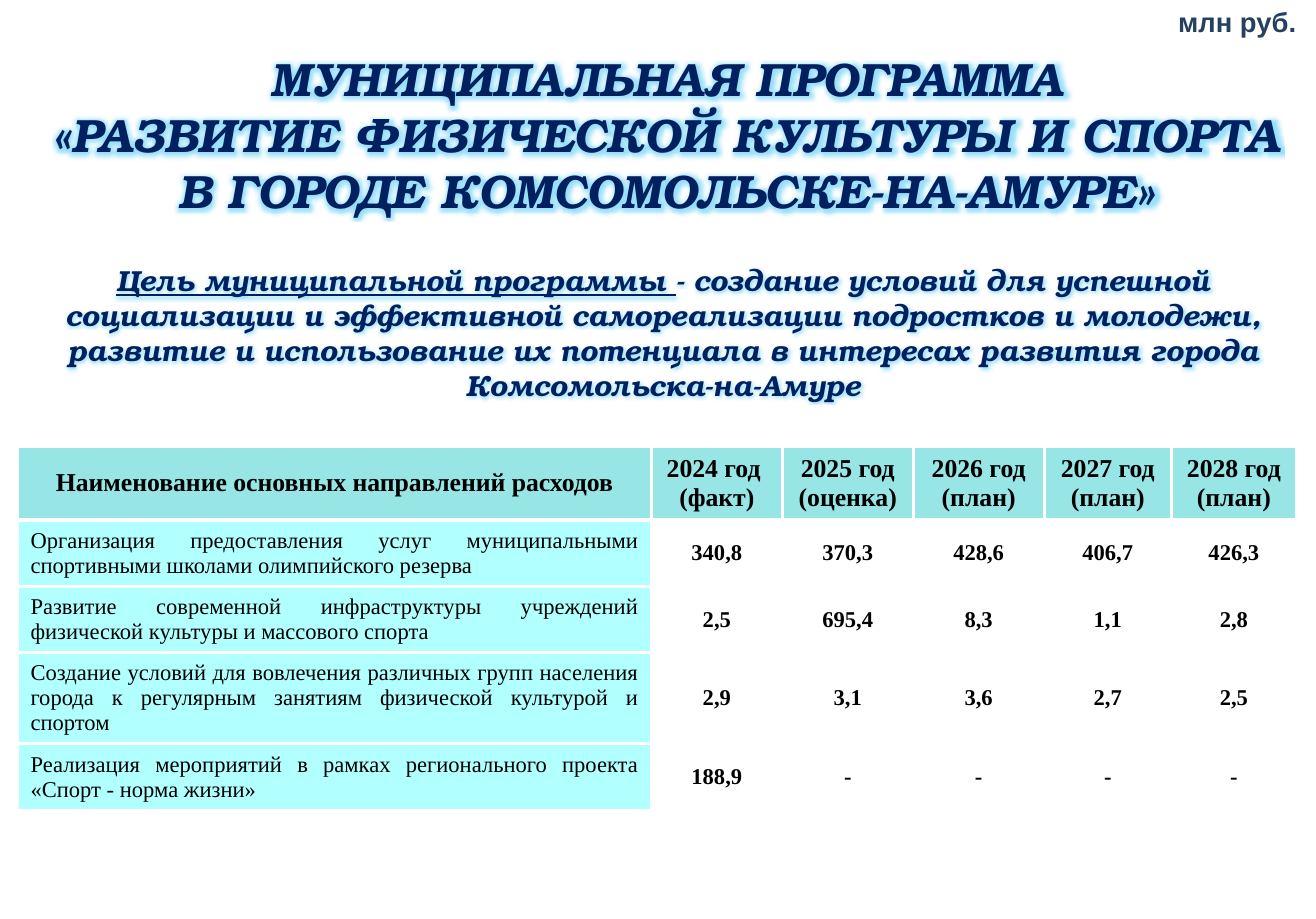
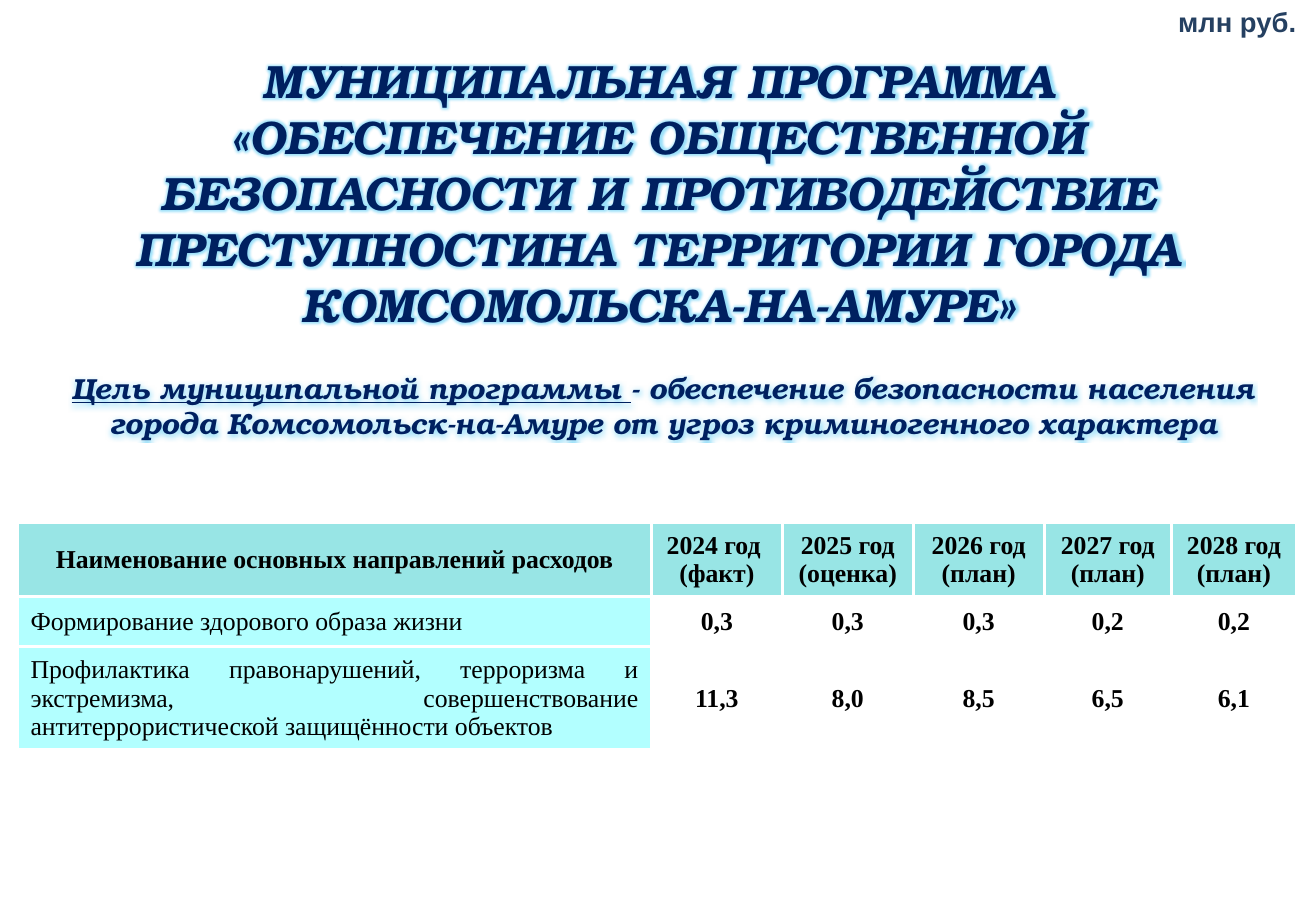
from lxml import etree
from pptx import Presentation
from pptx.dml.color import RGBColor
from pptx.enum.text import MSO_ANCHOR, MSO_AUTO_SIZE, PP_ALIGN
from pptx.oxml import parse_xml
from pptx.oxml.ns import nsdecls, qn
from pptx.util import Cm, Pt

CENTER, JUSTIFY, LEFT = PP_ALIGN.CENTER, PP_ALIGN.JUSTIFY, PP_ALIGN.LEFT
MIDDLE, BOTTOM = MSO_ANCHOR.MIDDLE, MSO_ANCHOR.BOTTOM
NO_FIT = MSO_AUTO_SIZE.NONE
TITLE_ONLY = 5

COLORS = {
    "navy": "002060",
    "note": "254061",
    "black": "000000",
    "white": "FFFFFF",
    "glow": "00B0F0",
    "header": "33CCCC",
    "label": "66FFFF",
}
DISPLAY = {"font": "TeX Gyre Bonum", "color": "navy", "bold": True, "italic": True, "glow": True}
COLUMN_WIDTHS = [13.89, 2.87, 2.87, 2.87, 2.79, 2.74]
HEADER = [
    "Наименование основных направлений расходов",
    "2024 год \n(факт)",
    "2025 год (оценка)",
    "2026 год (план)",
    "2027 год (план)",
    "2028 год (план)",
]
HEADER_HEIGHT = 1.6

PAGES = [
    {
        "title": "МУНИЦИПАЛЬНАЯ ПРОГРАММА\n«РАЗВИТИЕ ФИЗИЧЕСКОЙ КУЛЬТУРЫ И СПОРТА\n"
                 "В ГОРОДЕ КОМСОМОЛЬСКЕ-НА-АМУРЕ»",
        "title_at": (0.81, 0.79, 27.61, 4.29),
        "goal": "- создание условий для успешной социализации и эффективной самореализации "
                "подростков и молодежи, развитие и использование их потенциала в интересах "
                "развития города Комсомольска-на-Амуре",
        "goal_at": (0.61, 5.64, 27.86, 3.33),
        "table_top": 9.78,
        "size": 14,
        "heights": [1.45, 1.45, 1.97, 1.45],
        "rows": [
            ["Организация предоставления услуг муниципальными спортивными школами "
             "олимпийского резерва", "340,8", "370,3", "428,6", "406,7", "426,3"],
            ["Развитие современной инфраструктуры учреждений физической культуры "
             "и массового спорта", "2,5", "695,4", "8,3", "1,1", "2,8"],
            ["Создание условий для вовлечения различных групп населения города "
             "к регулярным занятиям физической культурой и спортом",
             "2,9", "3,1", "3,6", "2,7", "2,5"],
            ["Реализация мероприятий в рамках регионального проекта "
             "«Спорт - норма жизни»", "188,9", "-", "-", "-", "-"],
        ],
    },
    {
        "title": "МУНИЦИПАЛЬНАЯ ПРОГРАММА\n«ОБЕСПЕЧЕНИЕ ОБЩЕСТВЕННОЙ БЕЗОПАСНОСТИ "
                 "И ПРОТИВОДЕЙСТВИЕ ПРЕСТУПНОСТИНА ТЕРРИТОРИИ ГОРОДА КОМСОМОЛЬСКА-НА-АМУРЕ»",
        "title_at": (0.23, 0.69, 28.42, 6.88),
        "goal": "- обеспечение безопасности населения города Комсомольск-на-Амуре "
                "от угроз криминогенного характера",
        "goal_at": (0.61, 8, 27.86, 1.8),
        "table_top": 11.46,
        "size": 16,
        "heights": [1.1, 2.26],
        "rows": [
            ["Формирование здорового образа жизни", "0,3", "0,3", "0,3", "0,2", "0,2"],
            ["Профилактика правонарушений, терроризма и экстремизма, совершенствование "
             "антитеррористической защищённости объектов",
             "11,3", "8,0", "8,5", "6,5", "6,1"],
        ],
    },
]


def write(para, text, size, font, color, bold=False, italic=False,
          underline=False, glow=False, align=CENTER):
    para.alignment = align
    span = para.add_run()
    span.text = text
    span.font.size = Pt(size)
    span.font.bold = bold
    span.font.italic = italic
    span.font.underline = underline
    span.font.color.rgb = RGBColor.from_string(COLORS[color])
    if glow:
        span.font._element.append(parse_xml(
            f'<a:effectLst {nsdecls("a")}><a:glow rad="63500">'
            f'<a:srgbClr val="{COLORS["glow"]}"><a:alpha val="40000"/></a:srgbClr>'
            '</a:glow></a:effectLst>'))
    span.font.name = font


def write_lines(frame, text, **style):
    for index, line in enumerate(text.split("\n")):
        para = frame.add_paragraph() if index else frame.paragraphs[0]
        write(para, line, **style)


deck = Presentation()
deck.slide_width, deck.slide_height = Cm(28.85), Cm(20.14)

for content in PAGES:
    page = deck.slides.add_slide(deck.slide_layouts[TITLE_ONLY])

    title = page.shapes.title
    title.left, title.top, title.width, title.height = map(Cm, content["title_at"])
    frame = title.text_frame
    frame.auto_size = NO_FIT
    frame.word_wrap = True
    frame.vertical_anchor = BOTTOM
    frame.margin_left = frame.margin_right = frame.margin_top = frame.margin_bottom = Cm(0.3)
    write_lines(frame, content["title"], size=29, **DISPLAY)

    heights = [HEADER_HEIGHT] + content["heights"]
    table = page.shapes.add_table(
        len(heights), len(COLUMN_WIDTHS), Cm(0.39), Cm(content["table_top"]),
        Cm(sum(COLUMN_WIDTHS)), Cm(sum(heights))).table
    table.first_row = table.horz_banding = False
    for column, width in zip(table.columns, COLUMN_WIDTHS):
        column.width = Cm(width)
    for row, height in zip(table.rows, heights):
        row.height = Cm(height)

    for row_index, texts in enumerate([HEADER] + content["rows"]):
        for column_index, text in enumerate(texts):
            cell = table.cell(row_index, column_index)
            cell.vertical_anchor = MIDDLE
            cell.margin_left = cell.margin_right = Cm(0.28)
            cell.margin_top = cell.margin_bottom = Cm(0.18)
            properties = cell._tc.get_or_add_tcPr()
            for side in ("lnL", "lnR", "lnT", "lnB"):
                properties.append(parse_xml(
                    f'<a:{side} {nsdecls("a")} w="{Pt(2.25)}"><a:solidFill>'
                    f'<a:srgbClr val="{COLORS["white"]}"/></a:solidFill></a:{side}>'))

            is_header = row_index == 0
            is_label = column_index == 0 and not is_header
            if is_header or is_label:
                cell.fill.solid()
                cell.fill.fore_color.rgb = RGBColor.from_string(
                    COLORS["header" if is_header else "label"])
                fill_color = properties.find(qn("a:solidFill")).find(qn("a:srgbClr"))
                etree.SubElement(fill_color, qn("a:alpha"), val="50000")
            else:
                cell.fill.background()
            write_lines(cell.text_frame, text, size=16 if is_header else content["size"],
                        font="Times New Roman", color="black", bold=not is_label,
                        align=JUSTIFY if is_label else CENTER)

    unit_box = page.shapes.add_textbox(Cm(25.53), Cm(-0.03), Cm(3.25), Cm(1.04))
    frame = unit_box.text_frame
    frame.word_wrap = False
    frame.margin_left = frame.margin_right = Cm(0.3)
    frame.margin_top = frame.margin_bottom = Cm(0.15)
    write_lines(frame, "млн руб.", size=17, font="Arial", color="note", bold=True, align=LEFT)

    goal_box = page.shapes.add_textbox(*map(Cm, content["goal_at"]))
    goal_box.text_frame.word_wrap = True
    para = goal_box.text_frame.paragraphs[0]
    write(para, "Цель муниципальной программы ", size=18, underline=True, **DISPLAY)
    write(para, content["goal"], size=18, **DISPLAY)

deck.save("out.pptx")
